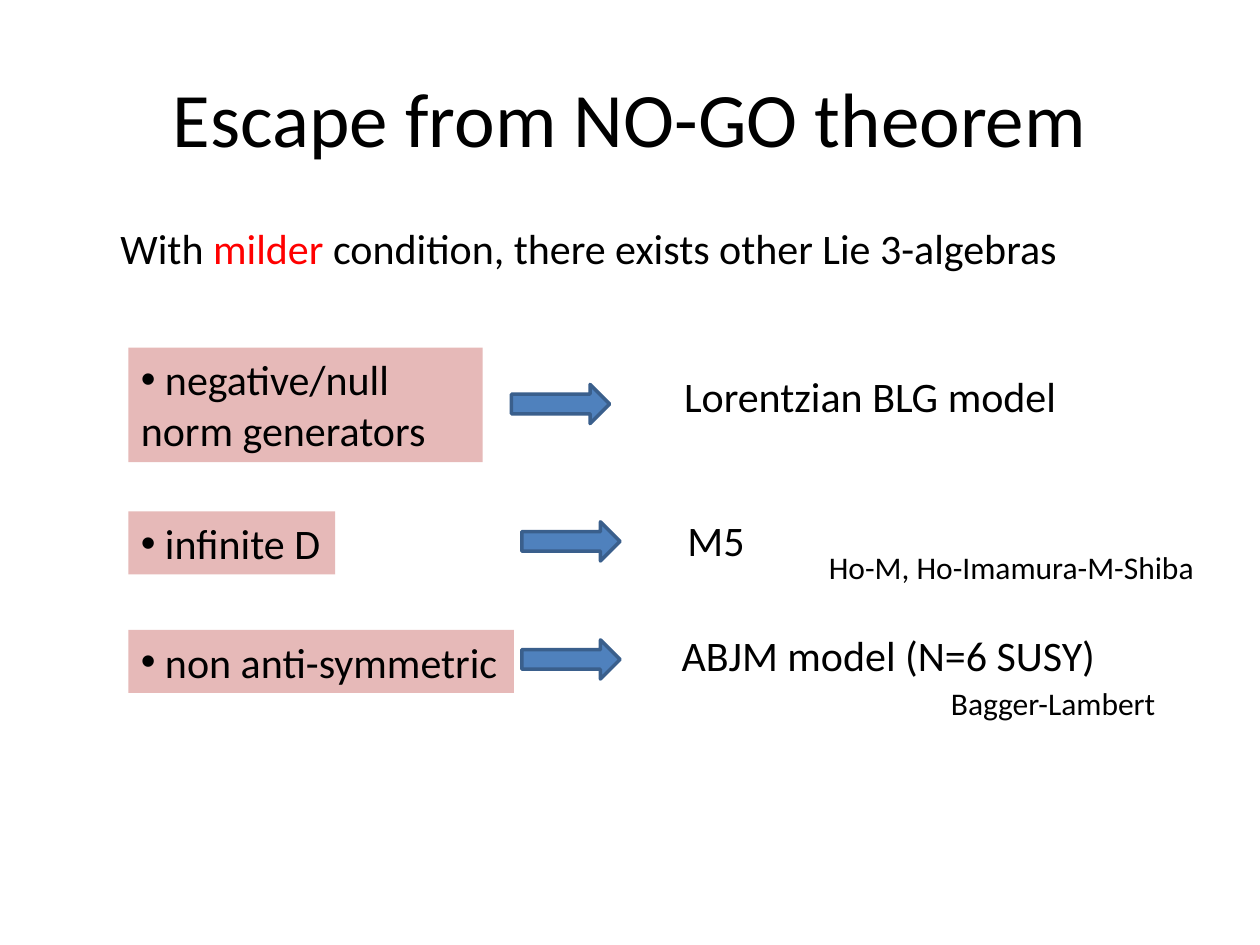
from lxml.etree import SubElement
from pptx import Presentation
from pptx.dml.color import RGBColor
from pptx.enum.shapes import MSO_SHAPE
from pptx.enum.text import MSO_ANCHOR, MSO_AUTO_SIZE, PP_ALIGN
from pptx.oxml.ns import qn
from pptx.util import Cm, Pt

FONT = "Calibri"
BLACK, RED, PINK = "000000", "FF0000", "E6B9B8"
BLUE, DARK_BLUE = "4F81BD", "3A5F8C"


def color(value):
    return RGBColor.from_string(value)


def format_span(span, size, value=BLACK):
    span.font.name = FONT
    span.font.size = Pt(size)
    span.font.color.rgb = color(value)


def add_text(page, left, top, width, height, parts, size=24, wrap=False):
    """Add a text box; parts are (text, colour) pairs on one line."""
    box = page.shapes.add_textbox(Cm(left), Cm(top), Cm(width), Cm(height))
    frame = box.text_frame
    frame.word_wrap = wrap
    frame.auto_size = MSO_AUTO_SIZE.SHAPE_TO_FIT_TEXT
    for text, value in parts:
        span = frame.paragraphs[0].add_run()
        span.text = text
        format_span(span, size, value)
    return box


def add_condition(page, top, width, height, text, wrap):
    """Add a bulleted condition on a pink ground."""
    box = add_text(page, 2.59, top, width, height, [(text, BLACK)], wrap=wrap)
    box.fill.solid()
    box.fill.fore_color.rgb = color(PINK)
    properties = box.text_frame.paragraphs[0]._p.get_or_add_pPr()
    SubElement(properties, qn("a:buFont"), typeface="Arial")
    SubElement(properties, qn("a:buChar"), char="•")


def add_arrow(page, left, top):
    arrow = page.shapes.add_shape(
        MSO_SHAPE.RIGHT_ARROW, Cm(left), Cm(top), Cm(1.98), Cm(0.79))
    arrow.shadow.inherit = False
    arrow.fill.solid()
    arrow.fill.fore_color.rgb = color(BLUE)
    arrow.line.color.rgb = color(DARK_BLUE)
    arrow.line.width = Pt(2)


def add_title(page, text):
    title = page.shapes.title
    title.left, title.top, title.width, title.height = (
        Cm(1.27), Cm(0.76), Cm(22.86), Cm(3.18))
    frame = title.text_frame
    frame.text = text
    frame.vertical_anchor = MSO_ANCHOR.MIDDLE
    frame.paragraphs[0].alignment = PP_ALIGN.CENTER
    format_span(frame.paragraphs[0].runs[0], 44)


def main():
    deck = Presentation()
    deck.slide_width, deck.slide_height = Cm(25.4), Cm(19.05)
    page = deck.slides.add_slide(deck.slide_layouts[5])

    # Title and introduction
    add_title(page, "Escape from NO-GO theorem")
    add_text(page, 2.18, 4.37, 20.29, 1.27, [
        ("With ", BLACK), ("milder", RED),
        (" condition, there exists other Lie 3-algebras", BLACK)])

    # Relaxed conditions: top, width, height, text, wrap
    conditions = [
        (7.01, 7.14, 2.31, " negative/null norm generators", True),
        (10.31, 4.17, 1.27, " infinite D", False),
        (12.7, 7.77, 1.27, " non anti-symmetric", False),
    ]
    for condition in conditions:
        add_condition(page, *condition)

    # Arrows from condition to model
    for left, top in [(10.31, 7.75), (10.52, 10.52), (10.52, 12.9)]:
        add_arrow(page, left, top)

    # Resulting models and their authors: left, top, width, height, text, size
    results = [
        (13.54, 7.34, 8.08, 1.27, "Lorentzian BLG model", 24),
        (13.61, 10.24, 1.68, 1.27, "M5", 24),
        (13.49, 12.57, 10.11, 1.27, "ABJM model (N=6 SUSY)", 24),
        (18.92, 13.67, 4.7, 1.02, "Bagger-Lambert", 18),
        (16.46, 10.92, 7.95, 1.02, "Ho-M, Ho-Imamura-M-Shiba", 18),
    ]
    for left, top, width, height, text, size in results:
        add_text(page, left, top, width, height, [(text, BLACK)], size,
                 wrap=text.startswith("ABJM"))

    deck.save("out.pptx")


if __name__ == "__main__":
    main()
